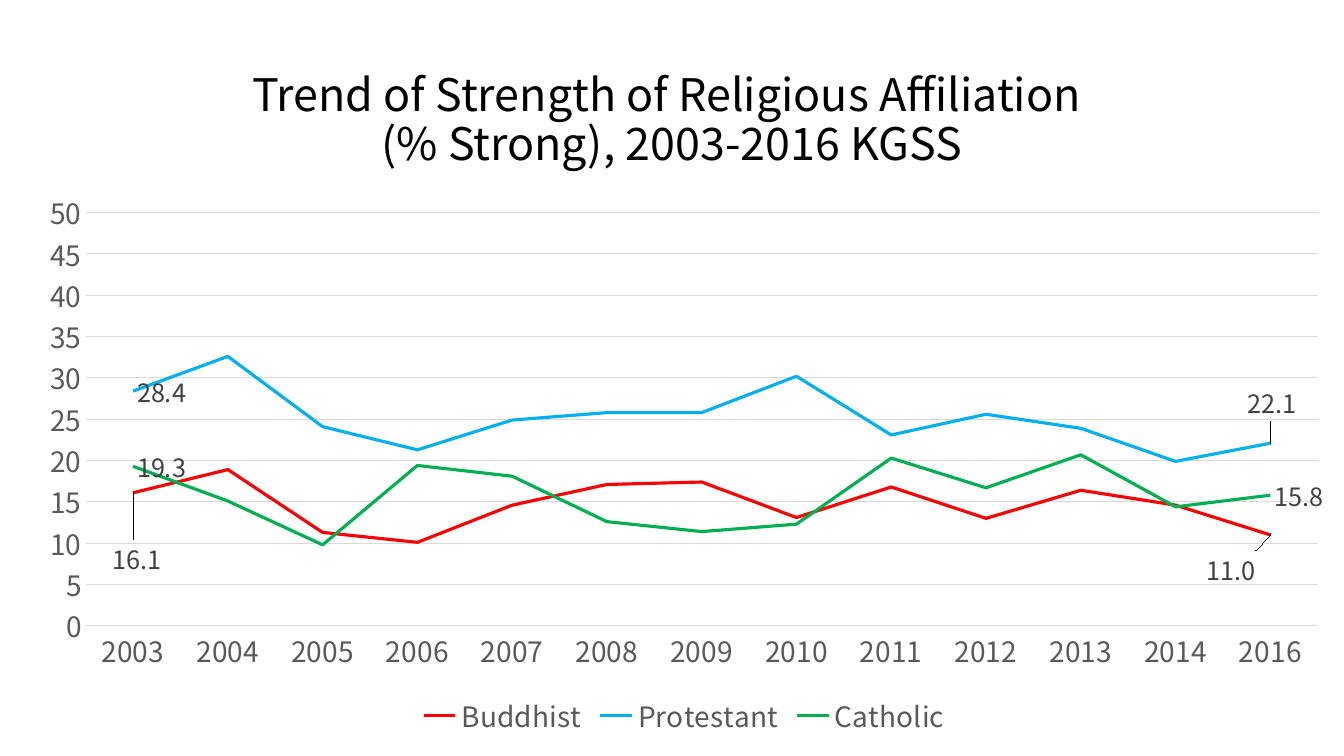
import pptx
import pptx.chart.data
import pptx.dml.color
import pptx.enum.chart
import pptx.enum.text
import pptx.oxml
import pptx.oxml.ns
import pptx.util
from pptx.util import Inches

# Content
FONT = "Noto Sans CJK KR"
TITLE_LINES = ["Trend of Strength of Religious Affiliation ", "(% Strong), 2003-2016 KGSS"]
YEARS = [str(year) for year in range(2003, 2015)] + ["2016"]
RELIGIONS = [
    ("Buddhist", "FF0000",
     [16.1, 18.9, 11.3, 10.1, 14.6, 17.1, 17.4, 13.1, 16.8, 13.0, 16.4, 14.6, 11.0]),
    ("Protestant", "00B0F0",
     [28.4, 32.6, 24.1, 21.3, 24.9, 25.8, 25.8, 30.2, 23.1, 25.6, 23.9, 19.9, 22.1]),
    ("Catholic", "00B050",
     [19.3, 15.1, 9.8, 19.4, 18.1, 12.6, 11.4, 12.3, 20.3, 16.7, 20.7, 14.4, 15.8]),
]
FIRST, LAST = 0, len(YEARS) - 1
# Inches by which a label is moved from its place right of the point
LABEL_SHIFTS = {
    ("Buddhist", FIRST): (-0.24, 0.65),
    ("Buddhist", LAST): (-0.67, 0.34),
    ("Protestant", LAST): (-0.27, -0.40),
}

# Places in inches: left, top, width, height
TITLE_BOX = (0.49, 0.61, 12.35, 1.19)
CHART_BOX = (0.24, 1.8, 13.09, 5.56)
PLOT_BOX = (0.85, 2.11, 12.22, 4.1)


def rgb(value):
    return pptx.dml.color.RGBColor.from_string(value)


def style_font(font, size, color):
    font.name, font.size = FONT, pptx.util.Pt(size)
    font.color.rgb = rgb(color)


def style_line(line, color, width):
    line.color.rgb = rgb(color)
    line.width = pptx.util.Pt(width)


def manual_layout(settings):
    inner = "".join(f'<c:{tag} val="{value}"/>' for tag, value in settings)
    return pptx.oxml.parse_xml(
        f'<c:layout {pptx.oxml.ns.nsdecls("c")}>'
        f"<c:manualLayout>{inner}</c:manualLayout></c:layout>")


def set_layout(parent, settings, index):
    for old in parent.findall(pptx.oxml.ns.qn("c:layout")):
        parent.remove(old)
    parent.insert(index, manual_layout(settings))


def show_leader_lines(labels_xml):
    for old in labels_xml.findall(pptx.oxml.ns.qn("c:showLeaderLines")):
        labels_xml.remove(old)
    labels_xml.append(pptx.oxml.parse_xml(
        f'<c:showLeaderLines {pptx.oxml.ns.nsdecls("c")} val="1"/>'))


deck = pptx.Presentation()
deck.slide_width, deck.slide_height = Inches(13.33), Inches(7.5)
slide = deck.slides.add_slide(deck.slide_layouts[6])

# Chart
chart_data = pptx.chart.data.CategoryChartData(number_format="0.0")
chart_data.categories = YEARS
for religion, _, shares in RELIGIONS:
    chart_data.add_series(religion, shares)
chart = slide.shapes.add_chart(
    pptx.enum.chart.XL_CHART_TYPE.LINE, *map(Inches, CHART_BOX), chart_data).chart
style_font(chart.font, 10, "000000")
chart.has_title = False
chart.has_legend = True
chart.legend.position = pptx.enum.chart.XL_LEGEND_POSITION.BOTTOM
chart.legend.include_in_layout = False
style_font(chart.legend.font, 20, "595959")

# Plot area, as fractions of the chart
chart_left, chart_top, chart_width, chart_height = CHART_BOX
plot_left, plot_top, plot_width, plot_height = PLOT_BOX
plot_area = chart.plots[0]._element.getparent()
set_layout(plot_area, [
    ("layoutTarget", "inner"), ("xMode", "edge"), ("yMode", "edge"),
    ("x", (plot_left - chart_left) / chart_width),
    ("y", (plot_top - chart_top) / chart_height),
    ("w", plot_width / chart_width), ("h", plot_height / chart_height)], 0)

# Axes
year_axis, share_axis = chart.category_axis, chart.value_axis
for axis in (year_axis, share_axis):
    style_font(axis.tick_labels.font, 20, "595959")
    axis.major_tick_mark = axis.minor_tick_mark = pptx.enum.chart.XL_TICK_MARK.NONE
style_line(year_axis.format.line, "D9D9D9", 0.75)
share_axis.format.line.fill.background()
share_axis.minimum_scale, share_axis.maximum_scale, share_axis.major_unit = 0, 50, 5
share_axis.tick_labels.number_format = "0"
share_axis.tick_labels.number_format_is_linked = False
share_axis.has_major_gridlines = True
style_line(share_axis.major_gridlines.format.line, "D9D9D9", 0.75)

# Lines, with labels on the first and last year
chart.plots[0].vary_by_categories = False
for series, (religion, color, _) in zip(chart.plots[0].series, RELIGIONS):
    series.smooth = False
    style_line(series.format.line, color, 2.25)
    series.data_labels.show_value = False
    for point in (FIRST, LAST):
        label = series.points[point].data_label
        style_font(label.font, 18, "404040")
        label.position = pptx.enum.chart.XL_LABEL_POSITION.RIGHT
        if (religion, point) in LABEL_SHIFTS:
            across, down = LABEL_SHIFTS[religion, point]
            label_xml = series.data_labels._element.xpath(
                f"c:dLbl[c:idx/@val='{point}']")[0]
            set_layout(label_xml, [("x", across / chart_width),
                                   ("y", down / chart_height)], 1)
    show_leader_lines(series.data_labels._element)

# Title
title = slide.shapes.add_textbox(*map(Inches, TITLE_BOX)).text_frame
title.word_wrap = True
title.vertical_anchor = pptx.enum.text.MSO_ANCHOR.MIDDLE
heading = title.paragraphs[0]
heading.alignment = pptx.enum.text.PP_ALIGN.CENTER
heading.line_spacing = 0.9
for number, line in enumerate(TITLE_LINES):
    if number:
        heading.add_line_break()
    run = heading.add_run()
    run.text = line
    style_font(run.font, 32, "000000")

deck.save("out.pptx")
